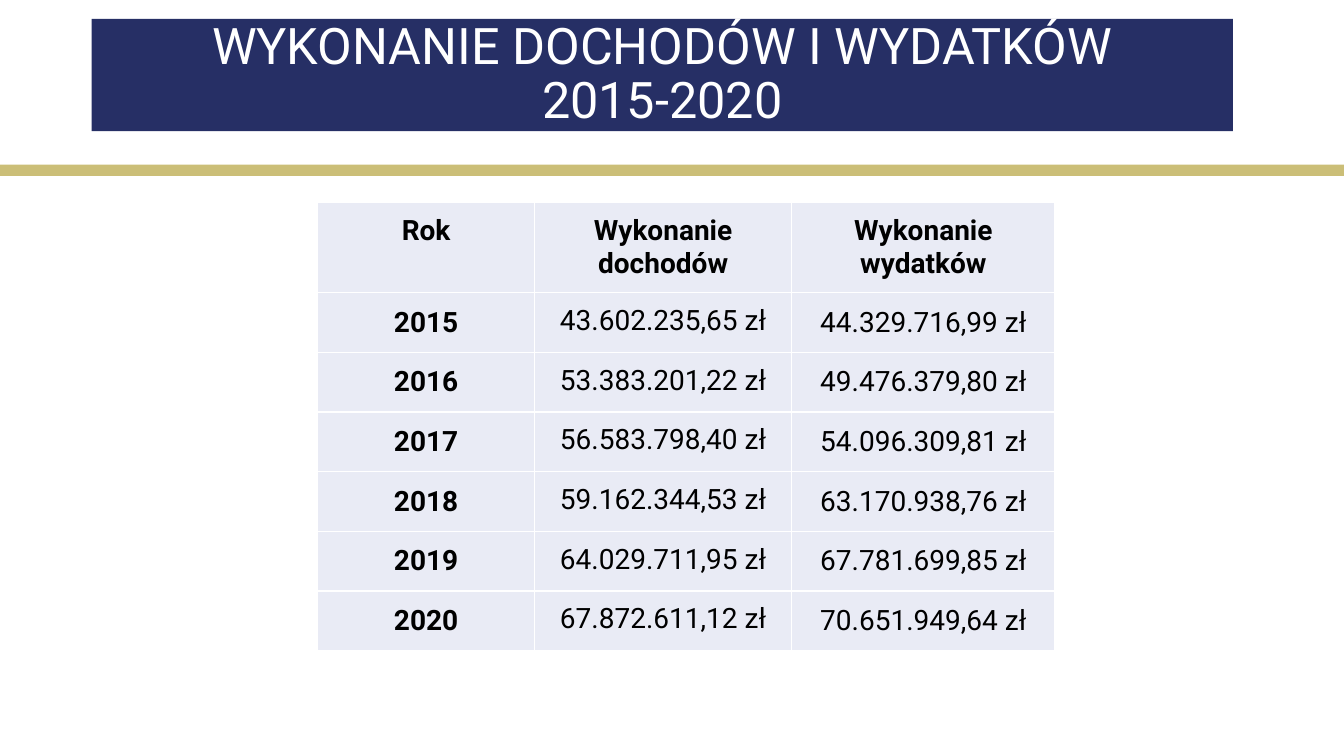
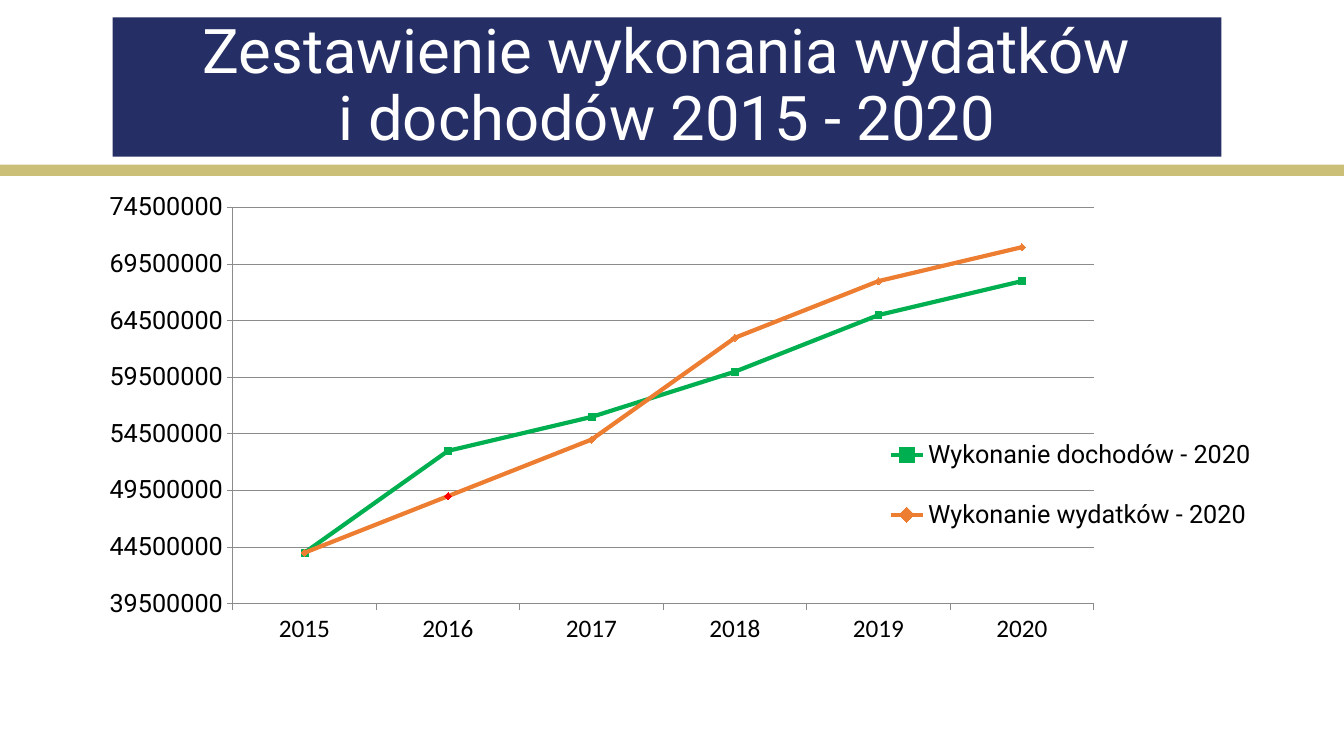
from lxml.etree import SubElement
from pptx import Presentation
from pptx.chart.data import CategoryChartData
from pptx.dml.color import RGBColor
from pptx.enum.chart import XL_CHART_TYPE, XL_LEGEND_POSITION, XL_MARKER_STYLE, XL_TICK_MARK
from pptx.enum.shapes import MSO_SHAPE
from pptx.enum.text import MSO_ANCHOR, PP_ALIGN
from pptx.oxml import parse_xml
from pptx.oxml.ns import nsdecls, qn
from pptx.util import Pt

NAVY = RGBColor(0x26, 0x2F, 0x65)
GOLD = RGBColor(0xCB, 0xBE, 0x77)
PALE = RGBColor(0xE9, 0xEB, 0xF5)
WHITE = RGBColor(0xFF, 0xFF, 0xFF)
BLACK = RGBColor(0, 0, 0)
GREY = RGBColor(0x8B, 0x8B, 0x8B)
GREEN = RGBColor(0, 0xB0, 0x50)
ORANGE = RGBColor(0xED, 0x7D, 0x31)
RED = RGBColor(0xFF, 0, 0)
FONT = "Roboto"

# Content
TITLES = [
    ("WYKONANIE DOCHODÓW I WYDATKÓW\n2015-2020", 36, (65.5, 13.5, 815.2, 80.2)),
    ("Zestawienie wykonania wydatków\ni dochodów 2015 - 2020", 44, (80.5, 12.5, 792, 99.5)),
]
ROWS = [
    ("Rok", "Wykonanie dochodów", "Wykonanie wydatków"),
    ("2015", "43.602.235,65 zł", "44.329.716,99 zł"),
    ("2016", "53.383.201,22 zł", "49.476.379,80 zł"),
    ("2017", "56.583.798,40 zł", "54.096.309,81 zł"),
    ("2018", "59.162.344,53 zł", "63.170.938,76 zł"),
    ("2019", "64.029.711,95 zł", "67.781.699,85 zł"),
    ("2020", "67.872.611,12 zł", "70.651.949,64 zł"),
]
COLS = (154.8, 183.8, 188)
HEAD, ROW = 64.3, 42.65
YEARS = [row[0] for row in ROWS[1:]]
MILLION = 1_000_000
SERIES = [  # name, millions, colour, marker
    ("Wykonanie dochodów - 2020", (44, 53, 56, 60, 65, 68), GREEN, XL_MARKER_STYLE.SQUARE),
    ("Wykonanie wydatków - 2020", (44, 49, 54, 63, 68, 71), ORANGE, XL_MARKER_STYLE.DIAMOND),
]
CHART = (56, 132.5, 850, 339)
PLOT = (110.3, 15.8, 615, 283)  # within the chart
LEGEND = (577.3, 161, 263, 106)


def style(font, **over):
    look = {"name": FONT, "size": Pt(20), "bold": False, **over}
    font.color.rgb = look.pop("color", BLACK)
    for key, value in look.items():
        setattr(font, key, value)


def block(slide, box, color):
    shape = slide.shapes.add_shape(MSO_SHAPE.RECTANGLE, *map(Pt, box))
    shape.shadow.inherit = False
    shape.fill.solid()
    shape.fill.fore_color.rgb = color
    shape.line.fill.background()
    return shape


def add_page(deck, title, size, box):
    slide = deck.slides.add_slide(deck.slide_layouts[6])
    block(slide, (0, 117.7, 960, 8), GOLD)
    frame = block(slide, box, NAVY).text_frame
    frame.word_wrap = True
    frame.vertical_anchor = MSO_ANCHOR.MIDDLE
    para = frame.paragraphs[0]
    para.text = title
    para.alignment = PP_ALIGN.CENTER
    para.line_spacing = 0.9
    style(para.font, size=Pt(size), color=WHITE)
    return slide


def edge(cell):
    props = cell._tc.get_or_add_tcPr()
    for side in ("lnL", "lnR", "lnT", "lnB"):
        line = SubElement(props, qn("a:" + side), w=str(Pt(1)))
        fill = SubElement(line, qn("a:solidFill"))
        SubElement(fill, qn("a:srgbClr"), val=str(WHITE))


def add_grid(slide):
    tall = HEAD + ROW * len(YEARS)
    table = slide.shapes.add_table(
        len(ROWS), len(COLS), Pt(227), Pt(144.7), Pt(sum(COLS)), Pt(tall)).table
    table.first_row = table.horz_banding = False
    for col, wide in zip(table.columns, COLS):
        col.width = Pt(wide)
    for r, texts in enumerate(ROWS):
        table.rows[r].height = Pt(ROW if r else HEAD)
        for c, text in enumerate(texts):
            cell = table.cell(r, c)
            edge(cell)
            cell.fill.solid()
            cell.fill.fore_color.rgb = PALE
            for side in ("left", "right", "top", "bottom"):
                setattr(cell, "margin_" + side, Pt(8.5))
            top = r == 0 or c == 1
            cell.vertical_anchor = MSO_ANCHOR.TOP if top else MSO_ANCHOR.MIDDLE
            para = cell.text_frame.paragraphs[0]
            para.text = text
            para.alignment = PP_ALIGN.CENTER
            style(para.font, bold=r == 0 or c == 0)


def place(part, index, box, inner=False):
    """Give a chart part a fixed place, from points within the chart."""
    for old in part.findall(qn("c:layout")):
        part.remove(old)
    parts = [val / full for val, full in zip(box, CHART[2:] * 2)]
    tags = [("layoutTarget", "inner")] if inner else []
    tags += [("xMode", "edge"), ("yMode", "edge"), *zip("xywh", parts)]
    body = "".join(f'<c:{tag} val="{val}"/>' for tag, val in tags)
    part.insert(index, parse_xml(
        f'<c:layout {nsdecls("c")}><c:manualLayout>{body}</c:manualLayout></c:layout>'))


def paint(item, color, shape):
    """Colour the line and the marker of a series or a point."""
    item.format.line.color.rgb = color
    item.format.line.width = Pt(3)
    mark = item.marker
    mark.style = shape
    mark.size = 5
    mark.format.fill.solid()
    mark.format.fill.fore_color.rgb = color
    mark.format.line.color.rgb = color


def add_graph(slide):
    data = CategoryChartData(number_format="0")
    data.categories = YEARS
    for name, vals, *_ in SERIES:
        data.add_series(name, [val * MILLION for val in vals])
    chart = slide.shapes.add_chart(
        XL_CHART_TYPE.LINE_MARKERS, *map(Pt, CHART), data).chart
    chart.has_title = False
    style(chart.font, name="Calibri", size=Pt(18))

    # Axes
    years, sums = chart.category_axis, chart.value_axis
    for axis, name in ((years, "Calibri"), (sums, FONT)):
        axis.major_tick_mark = XL_TICK_MARK.OUTSIDE
        axis.minor_tick_mark = XL_TICK_MARK.NONE
        style(axis.tick_labels.font, name=name, size=Pt(18))
        axis.format.line.color.rgb = GREY
    scale = {"minimum_scale": 39.5, "maximum_scale": 74.5, "major_unit": 5}
    for key, value in scale.items():
        setattr(sums, key, value * MILLION)
    sums.has_major_gridlines = True
    sums.major_gridlines.format.line.color.rgb = GREY
    sums.tick_labels.number_format = "0"
    sums.tick_labels.number_format_is_linked = False

    # Lines, with one red point
    plot = chart.plots[0]
    plot.vary_by_categories = False
    for line, (_, _, color, shape) in zip(plot.series, SERIES):
        line.smooth = False
        paint(line, color, shape)
    paint(plot.series[1].points[1], RED, XL_MARKER_STYLE.DIAMOND)

    # Legend and plot area
    chart.has_legend = True
    legend = chart.legend
    legend.position = XL_LEGEND_POSITION.RIGHT
    legend.include_in_layout = False
    style(legend.font, size=Pt(18))
    place(legend._element, 1, LEGEND)
    place(chart._chartSpace.chart.plotArea, 0, PLOT, inner=True)


def main():
    deck = Presentation()
    deck.slide_width, deck.slide_height = Pt(960), Pt(540)
    for title, fill in zip(TITLES, (add_grid, add_graph)):
        fill(add_page(deck, *title))
    deck.save("out.pptx")


if __name__ == "__main__":
    main()
